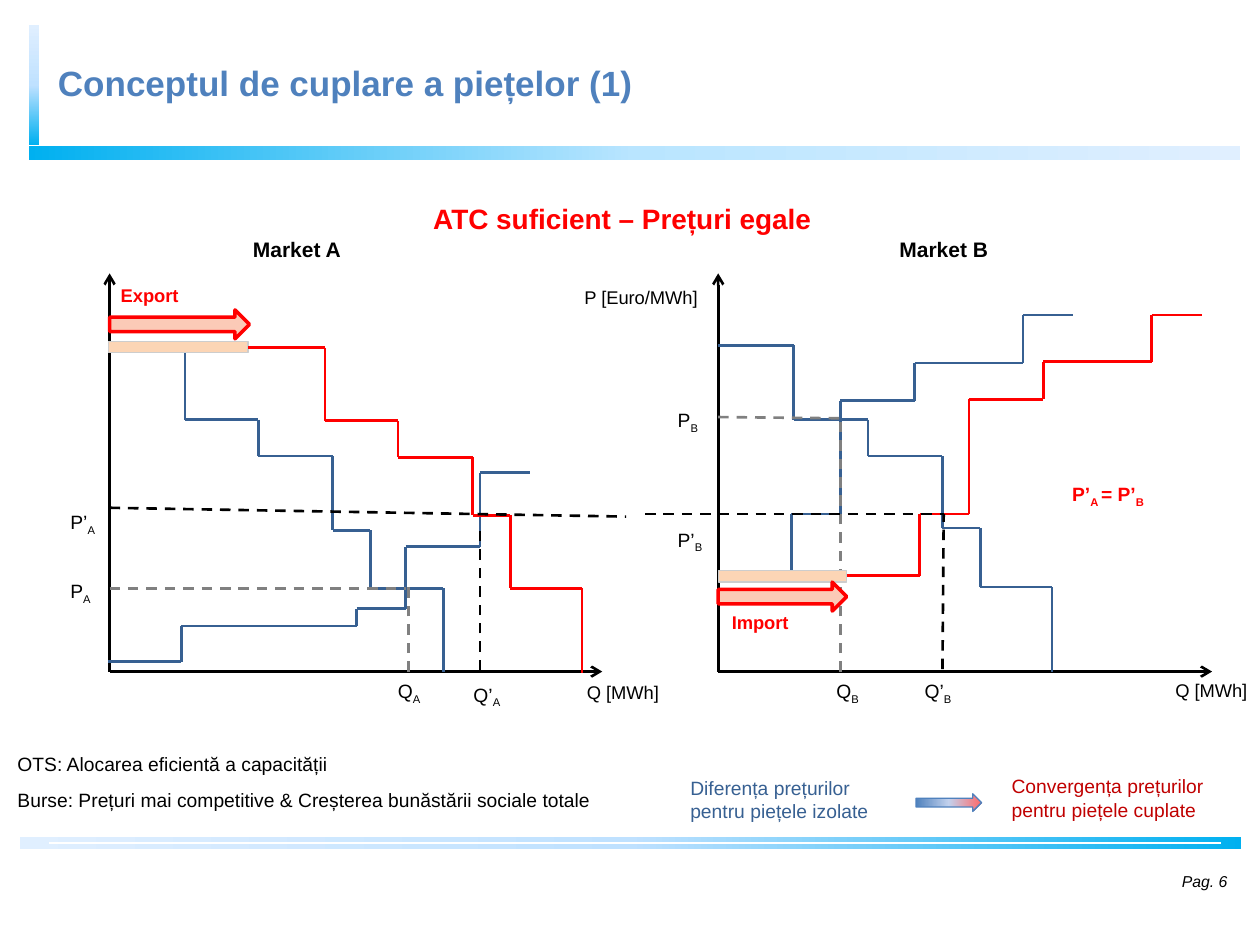
from copy import deepcopy
from itertools import pairwise
from lxml.etree import SubElement
from pptx import Presentation
from pptx.dml.color import RGBColor
from pptx.enum.dml import MSO_LINE
from pptx.enum.shapes import MSO_CONNECTOR, MSO_SHAPE
from pptx.enum.text import MSO_ANCHOR, MSO_AUTO_SIZE, PP_ALIGN
from pptx.oxml.ns import qn
from pptx.util import Pt

PX = 9144
FONT = "Arial"
HEX = {
    "black": "000000", "white": "FFFFFF", "title": "4F81BD", "blue": "376092",
    "red": "FF0000", "dark": "C00000", "gray": "808080", "peach": "FCD5B5",
    "edge": "CDCDCD", "pink": "FBCAB7", "sky": "00B0F0", "mid": "BFE1FF",
    "light": "B9E5FF", "pale": "E0EFFF", "haze": "C2D1ED", "coral": "FF6969",
}

TITLE = "Conceptul de cuplare a piețelor (1)"
BANDS = [
    ((23, 116, 961, 11), ("sky", "light", "pale"), 0),
    ((23, 20, 8, 95), ("sky", "mid", "pale"), 90),
    ((16, 664, 969, 10), ("pale", "mid", "sky"), 0),
]
AXES = [(87, 478), (570, 962)]
TOP, BASE = 217, 533

# Each curve: start point, then x and y in turn.
BLUE = [
    (87, 275, 147, 333, 205, 362, 264, 421, 294, 467, 352, 533),
    (570, 274, 630, 333, 689, 362, 748, 419, 778, 466, 835, 533),
    (86, 525, 144, 497, 283, 483, 322, 434, 381, 375, 421),
    (570, 458, 628, 408, 667, 318, 726, 288, 812, 250, 852),
]
RED = [
    (197, 276, 258, 334, 316, 363, 375, 409, 405, 467, 462, 534),
    (672, 457, 730, 408, 769, 317, 828, 287, 914, 250, 954),
]
OLD = [
    (87, 467, 322, 467), (570, 331, 667, 332),
    (324, 533, 324, 466), (667, 533, 667, 333),
]
NEW = [
    (381, 532, 381, 420), (512, 408, 749, 408),
    (748, 531, 749, 408), (87, 403, 497, 410),
]
BARS = [(570, 453, 102, 9), (86, 271, 111, 9)]
ARROWS = [(87, 246, 111, 23), (570, 462, 102, 23)]

# A bar switches between normal text and subscript.
LABELS = [
    ("Market A", 191, 183, 90, 30, 12, "black", True),
    ("Market B", 704, 183, 91, 30, 12, "black", True),
    ("Diferența prețurilor\npentru piețele izolate", 538, 611, 162, 47, 11, "blue", False),
    ("Convergența prețurilor\npentru piețele cuplate", 793, 610, 178, 47, 11, "dark", False),
    ("Q [MWh]", 456, 536, 81, 29, 10.5, "black", False),
    ("Q [MWh]", 923, 534, 81, 29, 10.5, "black", False),
    ("P [Euro/MWh]", 454, 222, 116, 29, 10.5, "black", False),
    ("OTS: Alocarea eficientă a capacității", 4, 592, 269, 29, 11, "black", False),
    ("Burse: Prețuri mai competitive & Creșterea bunăstării sociale totale",
     4, 621, 478, 29, 11, "black", False),
    ("ATC suficient – Prețuri egale", 334, 155, 324, 37, 16, "red", True),
    ("P|A", 46, 455, 37, 29, 11, "black", False),
    ("P|B", 528, 319, 37, 29, 11, "black", False),
    ("Q|A", 306, 534, 39, 29, 11, "black", False),
    ("Q|B", 654, 534, 39, 29, 11, "black", False),
    ("P’|A", 46, 400, 41, 29, 11, "black", False),
    ("P’|B", 528, 414, 41, 29, 11, "black", False),
    ("Q’|A", 366, 537, 43, 29, 11, "black", False),
    ("Q’|B", 724, 534, 43, 29, 11, "black", False),
    ("P’|A |= P’|B", 841, 378, 81, 29, 11, "red", True),
    ("Export", 86, 221, 69, 29, 10.5, "red", True),
    ("Import", 571, 480, 66, 28, 10.5, "red", True),
]

deck = Presentation()
deck.slide_width, deck.slide_height = 1000 * PX, 750 * PX
slide = deck.slides.add_slide(deck.slide_layouts[5])
shapes = slide.shapes


def rgb(name):
    return RGBColor.from_string(HEX[name])


def scale(box):
    return [n * PX for n in box]


def style(font, size, tint, bold=False):
    font.name, font.size, font.bold = FONT, Pt(size), bold
    font.color.rgb = rgb(tint)


def shade(shape, tints, angle=0):
    fill = shape.fill
    fill.gradient()
    fill.gradient_angle = angle
    stops = shape._element.spPr.find(".//" + qn("a:gsLst"))
    stops.append(deepcopy(stops[0]))
    for stop, tint, place in zip(fill.gradient_stops, tints, (0, 0.5, 1)):
        stop.color.rgb, stop.position = rgb(tint), place


def block(kind, box, fill, edge=None, width=0.75):
    shape = shapes.add_shape(kind, *scale(box))
    shape.shadow.inherit = False
    if isinstance(fill, str):
        shape.fill.solid()
        shape.fill.fore_color.rgb = rgb(fill)
    else:
        shade(shape, *fill)
    if edge:
        shape.line.color.rgb, shape.line.width = rgb(edge), Pt(width)
    else:
        shape.line.fill.background()


def rule(ends, tint, width=1.5, dash=False, head=False):
    line = shapes.add_connector(MSO_CONNECTOR.STRAIGHT, *scale(ends))
    line.line.color.rgb, line.line.width = rgb(tint), Pt(width)
    if dash:
        line.line.dash_style = MSO_LINE.DASH
    props = line._element.spPr
    if head:
        SubElement(props.find(qn("a:ln")), qn("a:tailEnd"), type="arrow")
    SubElement(props, qn("a:effectLst"))


def steps(curve, tint):
    for i, ((a, b), c) in enumerate(zip(pairwise(curve), curve[2:])):
        rule((b, a, b, c) if i % 2 else (a, b, c, b), tint)


def label(text, x, y, w, h, size, tint, bold):
    frame = shapes.add_textbox(*scale((x, y, w, h))).text_frame
    for i, row in enumerate(text.split("\n")):
        para = frame.add_paragraph() if i else frame.paragraphs[0]
        style(para.font, size, tint, bold)
        for j, part in enumerate(row.split("|")):
            run = para.add_run()
            run.text = part
            if j % 2:
                run.font._element.set("baseline", "-25000")
    return frame


for box, tints, angle in BANDS:
    block(MSO_SHAPE.RECTANGLE, box, (tints, angle))
rule((39, 669, 969, 669), "white", 0.75)

title = shapes.title
title.left, title.top, title.width, title.height = scale((36, 44, 964, 54))
frame = title.text_frame
frame.text = TITLE
frame.auto_size, frame.vertical_anchor = MSO_AUTO_SIZE.NONE, MSO_ANCHOR.TOP
frame.paragraphs[0].alignment = PP_ALIGN.LEFT
style(frame.paragraphs[0].font, 20, "title", True)

for left, right in AXES:
    rule((left, BASE, right, BASE), "black", head=True)
    rule((left, BASE, left, TOP), "black", head=True)
for curve in BLUE:
    steps(curve, "blue")
for ends in OLD:
    rule(ends, "gray", dash=True)
for box in BARS:
    block(MSO_SHAPE.RECTANGLE, box, "peach", "edge")
for curve in RED:
    steps(curve, "red")
for ends in NEW:
    rule(ends, "black", dash=True)
for box in ARROWS:
    block(MSO_SHAPE.RIGHT_ARROW, box, "pink", "red", 2)
block(MSO_SHAPE.RIGHT_ARROW, (727, 630, 52, 14), (("title", "haze", "coral"),), "title")
for item in LABELS:
    label(*item)

page = label("Pag. 6", 875, 679, 109, 40, 9, "black", False)
page.word_wrap, page.vertical_anchor = True, MSO_ANCHOR.MIDDLE
page.paragraphs[0].alignment = PP_ALIGN.RIGHT
page.paragraphs[0].font.italic = True

deck.save("out.pptx")
